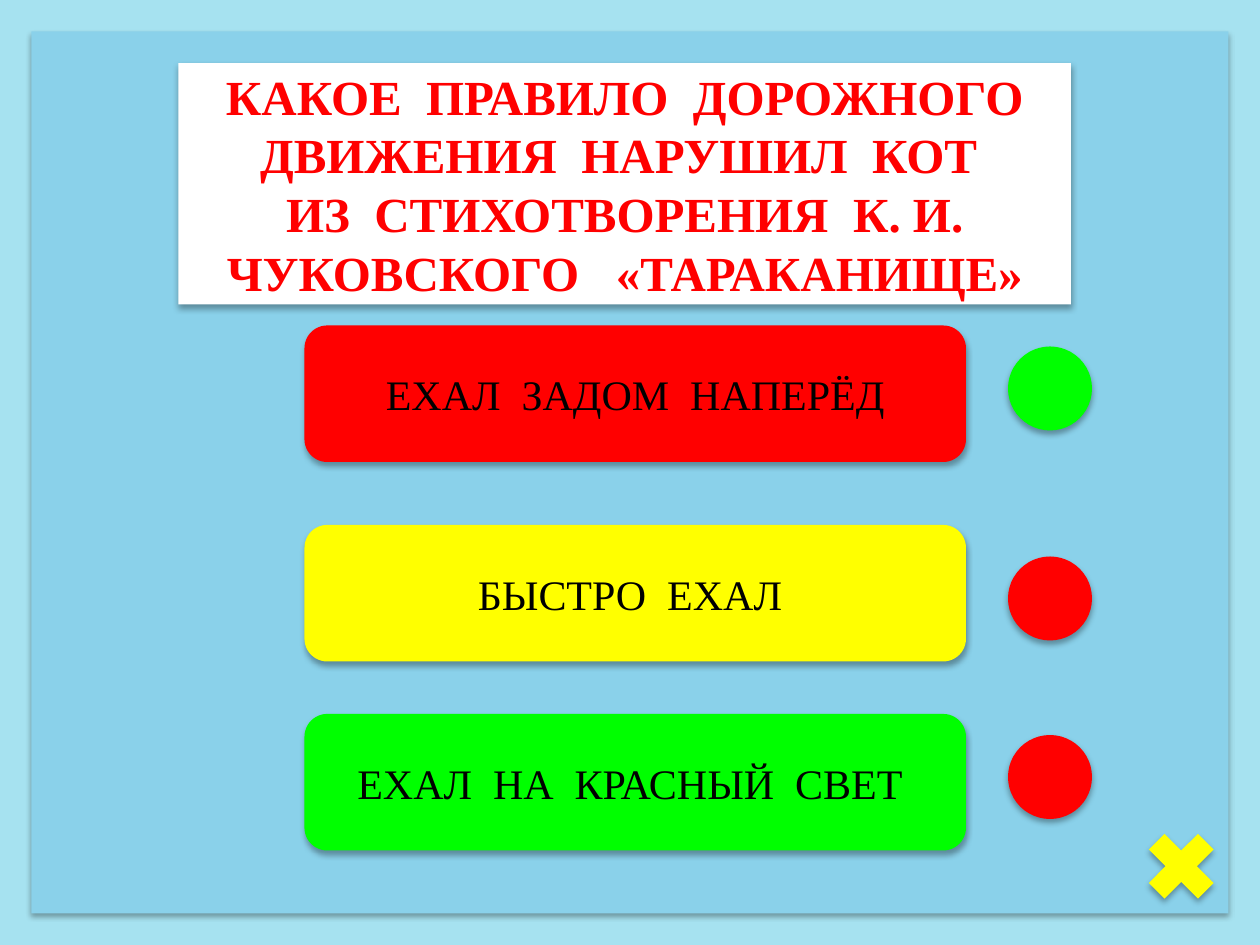
from lxml.etree import SubElement
from pptx import Presentation
from pptx.dml.color import RGBColor
from pptx.enum.shapes import MSO_SHAPE as Preset
from pptx.enum.text import MSO_ANCHOR, MSO_AUTO_SIZE, PP_ALIGN
from pptx.oxml.ns import qn
from pptx.util import Pt

COLORS = {
    "frame": "A6E2F0",
    "panel": "8AD1EA",
    "white": "FFFFFF",
    "red": "FF0000",
    "yellow": "FFFF00",
    "green": "00FF00",
    "black": "000000",
}
FONT = "Times New Roman"
QUESTION = [
    "КАКОЕ  ПРАВИЛО  ДОРОЖНОГО ДВИЖЕНИЯ  НАРУШИЛ  КОТ ",
    "ИЗ  СТИХОТВОРЕНИЯ  К. И. ЧУКОВСКОГО   «ТАРАКАНИЩЕ»",
]
# Answer text, answer colour, answer top, light colour, light top
ANSWERS = [
    ("ЕХАЛ  ЗАДОМ  НАПЕРЁД", "red", 186, "green", 198),
    ("БЫСТРО  ЕХАЛ ", "yellow", 300, "red", 318),
    ("ЕХАЛ  НА  КРАСНЫЙ  СВЕТ ", "green", 408, "red", 420),
]


def rgb(name):
    return RGBColor.from_string(COLORS[name])


def style(shape, color):
    """Solid fill, no outline and a soft shadow below."""
    shape.fill.solid()
    shape.fill.fore_color.rgb = rgb(color)
    shape.line.fill.background()
    effects = SubElement(shape.element.spPr, qn("a:effectLst"))
    shadow = SubElement(effects, qn("a:outerShdw"), blurRad=str(Pt(3.5)),
                        dist=str(Pt(2.2)), dir="5400000", rotWithShape="0")
    shade = SubElement(shadow, qn("a:srgbClr"), val=COLORS["black"])
    SubElement(shade, qn("a:alpha"), val="32000")


def add_figure(slide, preset, box, color):
    figure = slide.shapes.add_shape(preset, *map(Pt, box))
    style(figure, color)
    return figure


def write(shape, lines, size, color, bold=False):
    frame = shape.text_frame
    frame.word_wrap = True
    frame.auto_size = MSO_AUTO_SIZE.NONE
    frame.vertical_anchor = MSO_ANCHOR.MIDDLE
    for index, line in enumerate(lines):
        paragraph = frame.add_paragraph() if index else frame.paragraphs[0]
        paragraph.alignment = PP_ALIGN.CENTER
        run = paragraph.add_run()
        run.text = line
        run.font.name = FONT
        run.font.size = Pt(size)
        run.font.bold = bold
        run.font.color.rgb = rgb(color)


def add_backdrop(slide, box, margin):
    left, top, width, height = box
    add_figure(slide, Preset.RECTANGLE, box, "frame")
    inner = (left + margin, top + margin, width - 2 * margin, height - 2 * margin)
    return add_figure(slide, Preset.RECTANGLE, inner, "panel")


def add_question(slide, box, backdrop):
    question = slide.shapes.title
    question.left, question.top, question.width, question.height = map(Pt, box)
    style(question, "white")
    write(question, QUESTION, 28, "red", bold=True)
    backdrop.element.addnext(question.element)  # bring in front of the backdrop


def add_answers(slide, box):
    left, top, width, height = box
    light_size = 48
    light_left = left + width - light_size
    answer_width = width - light_size - 24
    for text, color, answer_top, light_color, light_top in ANSWERS:
        answer = add_figure(slide, Preset.ROUNDED_RECTANGLE,
                            (left, answer_top, answer_width, 78), color)
        write(answer, [text], 24, "black")
        add_figure(slide, Preset.OVAL,
                   (light_left, light_top, light_size, light_size), light_color)


def main():
    deck = Presentation()
    deck.slide_width, deck.slide_height = Pt(720), Pt(540)
    slide = deck.slides.add_slide(deck.slide_layouts[5])

    backdrop = add_backdrop(slide, (0, 0, 720, 540), 18)
    add_question(slide, (102, 36, 510, 138), backdrop)
    add_answers(slide, (174, 186, 450, 300))
    # Closing cross
    add_figure(slide, Preset.MATH_MULTIPLY, (648, 468, 54, 54), "yellow")

    deck.save("out.pptx")


if __name__ == "__main__":
    main()
